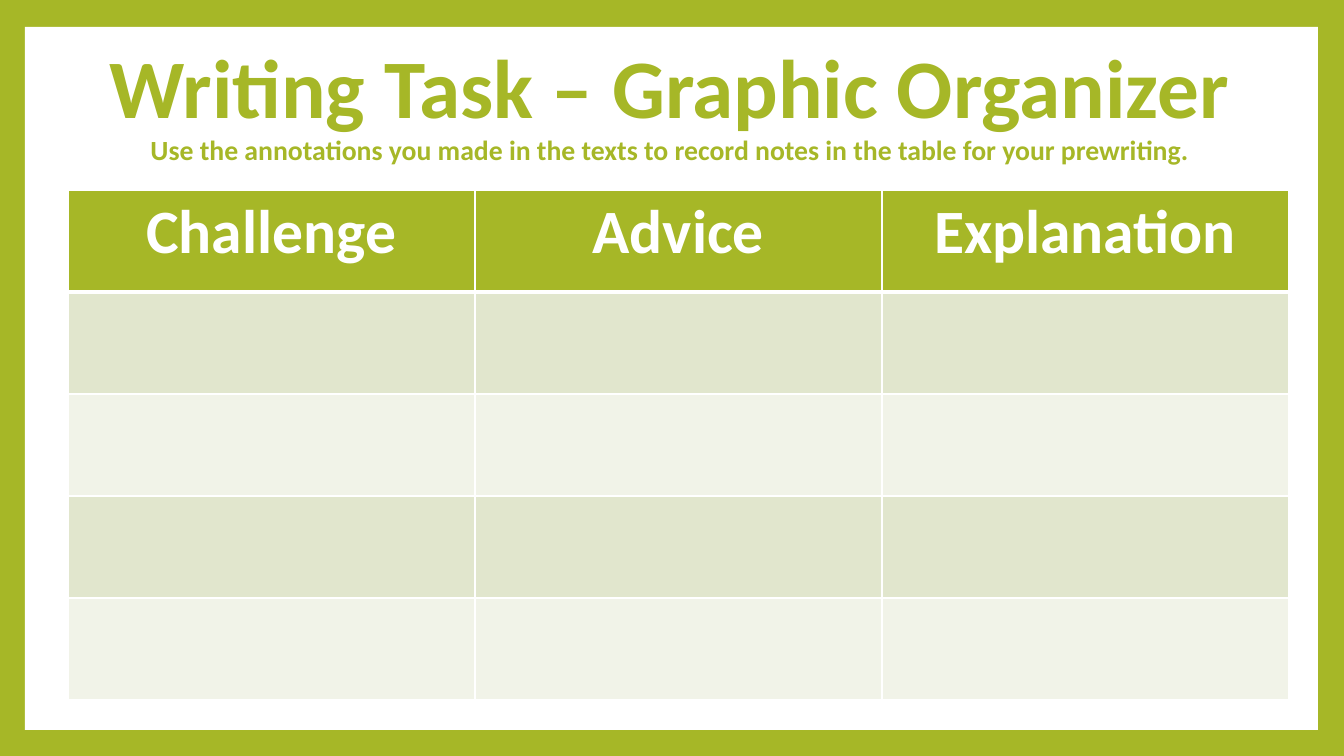
from dataclasses import dataclass

from lxml.etree import SubElement
from pptx import Presentation
from pptx.dml.color import RGBColor
from pptx.enum.shapes import MSO_SHAPE
from pptx.enum.text import MSO_ANCHOR, MSO_AUTO_SIZE, PP_ALIGN
from pptx.oxml.ns import qn
from pptx.util import Emu, Pt

EMU_PER_PX = 12192000 / 1344
COLORS = {
    "green": "A6B727",
    "white": "FFFFFF",
    "dark_band": "E1E6CD",
    "light_band": "F1F3E8",
}
HEADINGS = ("Challenge", "Advice", "Explanation")
BANDS = ("dark_band", "light_band", "dark_band", "light_band")
COLUMN_WIDTH, ROW_HEIGHT = 407, 102
FRAME_FORMAT = {
    "word_wrap": True,
    "auto_size": MSO_AUTO_SIZE.NONE,
    "vertical_anchor": MSO_ANCHOR.MIDDLE,
}


@dataclass(frozen=True)
class Box:
    left: int
    top: int
    width: int
    height: int

    def emu(self) -> tuple:
        return px(self.left), px(self.top), px(self.width), px(self.height)


@dataclass(frozen=True)
class TextLine:
    text: str
    size: float
    color: str


PANEL = Box(25, 27, 1293, 703)
TITLE = Box(35, 25, 1269, 164)
TABLE = Box(68, 190, COLUMN_WIDTH * len(HEADINGS), ROW_HEIGHT * (len(BANDS) + 1))
TITLE_LINES = (
    TextLine("Writing Task – Graphic Organizer", 59.4, "green"),
    TextLine(
        "Use the annotations you made in the texts to record notes in the table for your prewriting.",
        19.8,
        "green",
    ),
)


def px(length: int) -> Emu:
    return Emu(round(length * EMU_PER_PX))


def rgb(name: str) -> RGBColor:
    return RGBColor.from_string(COLORS[name])


def fill_with(fill, color: str) -> None:
    fill.solid()
    fill.fore_color.rgb = rgb(color)


def write_line(paragraph, line: TextLine) -> None:
    run = paragraph.add_run()
    run.text = line.text
    font_format = {"name": "Calibri", "size": Pt(line.size), "bold": True}
    for name, value in font_format.items():
        setattr(run.font, name, value)
    run.font.color.rgb = rgb(line.color)


def draw_title(title) -> None:
    title.left, title.top, title.width, title.height = TITLE.emu()
    for name, value in FRAME_FORMAT.items():
        setattr(title.text_frame, name, value)
    paragraph = title.text_frame.paragraphs[0]
    paragraph.alignment = PP_ALIGN.CENTER
    paragraph.line_spacing = 0.9
    for index, line in enumerate(TITLE_LINES):
        if index:
            paragraph.add_line_break()
        write_line(paragraph, line)


def draw_panel(slide) -> None:
    panel = slide.shapes.add_shape(MSO_SHAPE.RECTANGLE, *PANEL.emu())
    panel.shadow.inherit = False
    fill_with(panel.fill, "white")
    panel.line.fill.background()
    slide.shapes.title.element.addprevious(panel.element)


def style_cell(cell, color: str, top: int, bottom: int) -> None:
    properties = cell._tc.get_or_add_tcPr()
    for side, points in {"L": 1, "R": 1, "T": top, "B": bottom}.items():
        border = SubElement(properties, qn(f"a:ln{side}"), w=str(Pt(points)))
        solid = SubElement(border, qn("a:solidFill"))
        SubElement(solid, qn("a:srgbClr"), val=COLORS["white"])
    fill_with(cell.fill, color)


def draw_table(slide) -> None:
    table = slide.shapes.add_table(len(BANDS) + 1, len(HEADINGS), *TABLE.emu()).table
    for column in table.columns:
        column.width = px(COLUMN_WIDTH)
    for index, (row, color) in enumerate(zip(table.rows, ("green", *BANDS))):
        row.height = px(ROW_HEIGHT)
        for cell in row.cells:
            style_cell(cell, color, 3 if index == 1 else 1, 3 if index == 0 else 1)
    for cell, heading in zip(table.rows[0].cells, HEADINGS):
        paragraph = cell.text_frame.paragraphs[0]
        paragraph.alignment = PP_ALIGN.CENTER
        write_line(paragraph, TextLine(heading, 44, "white"))


def main() -> None:
    presentation = Presentation()
    presentation.slide_width, presentation.slide_height = px(1344), px(756)
    slide = presentation.slides.add_slide(presentation.slide_layouts.get_by_name("Title Only"))
    fill_with(slide.background.fill, "green")
    draw_title(slide.shapes.title)
    draw_panel(slide)
    draw_table(slide)
    presentation.save("out.pptx")


if __name__ == "__main__":
    main()
